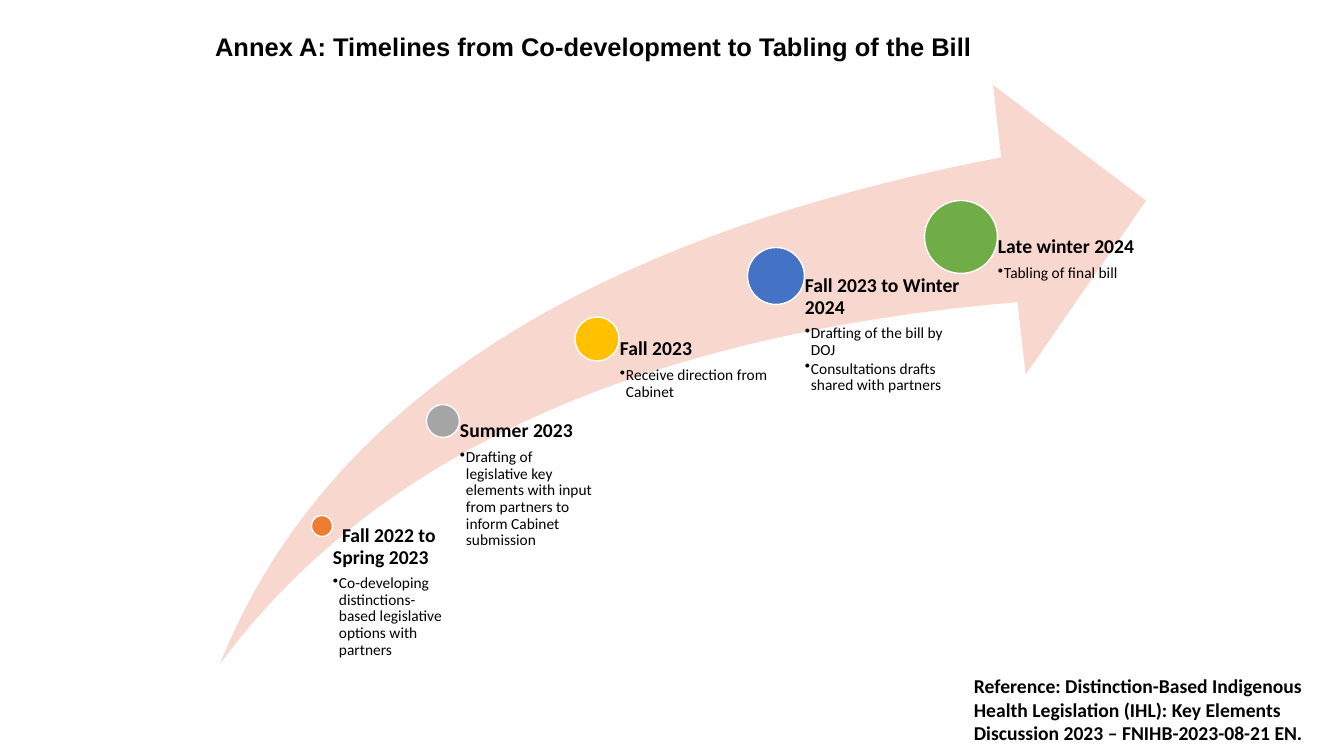
from pptx import Presentation
from pptx.dml.color import RGBColor
from pptx.enum.shapes import MSO_SHAPE as Kind
from pptx.enum.text import MSO_ANCHOR as Anchor, PP_ALIGN as Align
from pptx.oxml.ns import qn
from pptx.util import Pt
from lxml.etree import SubElement

INK = RGBColor(0x02, 0x02, 0x02)
BLACK = RGBColor(0, 0, 0)
WHITE = RGBColor(0xFF, 0xFF, 0xFF)
PEACH = RGBColor(0xF8, 0xD7, 0xCE)
ORANGE = RGBColor(0xED, 0x7D, 0x31)
GREY = RGBColor(0xA5, 0xA5, 0xA5)
GOLD = RGBColor(0xFF, 0xC0, 0x00)
BLUE = RGBColor(0x44, 0x72, 0xC4)
GREEN = RGBColor(0x70, 0xAD, 0x47)


def px(*nums):
    """Turn pixels (100.8 to the inch) into a list of EMU lengths."""
    return [round(n * 914400 / 100.8) for n in nums]


def add_run(para, text, size, bold=True, color=BLACK, face="Calibri"):
    run = para.add_run()
    run.text = text
    font = run.font
    font.size, font.bold, font.name = Pt(size), bold, face
    font.color.rgb = color


deck = Presentation()
deck.slide_width, deck.slide_height = px(1344, 756)
slide = deck.slides.add_slide(deck.slide_layouts[5])

# Title
title = slide.shapes.title
title.left, title.top, title.width, title.height = px(205, 29, 860, 38)
frame = title.text_frame
frame.word_wrap = True
frame.vertical_anchor = Anchor.TOP
para = frame.paragraphs[0]
para.alignment = Align.LEFT
para.line_spacing = 0.9
add_run(para, "Annex A: Timelines from Co-development to Tabling of the Bill",
        18.2, color=INK, face="Arial")

# Arrow
group = slide.shapes.add_group_shape().shapes
arrow = group.add_shape(Kind.SWOOSH_ARROW, *px(220, 85, 926, 579))
arrow.adjustments[0] = arrow.adjustments[1] = 0.25
arrow.shadow.inherit = False
arrow.fill.solid()
arrow.fill.fore_color.rgb = PEACH
arrow.line.fill.background()

# Milestones: centre, dot size, label width, colour, first-line indent, date, tasks
BASE = 664
steps = [
    (322, 526, 21, 121, ORANGE, 9, "Fall 2022 to Spring 2023",
     ["Co-developing distinctions-based legislative options with partners"]),
    (443, 421, 33, 154, GREY, 0, "Summer 2023",
     ["Drafting of legislative key elements with input from partners "
      "to inform Cabinet submission"]),
    (597, 339, 44, 178, GOLD, 0, "Fall 2023",
     ["Receive direction from Cabinet"]),
    (776, 276, 57, 185, BLUE, 0, "Fall 2023 to Winter 2024",
     ["Drafting of the bill by DOJ",
      "Consultations drafts shared with partners"]),
    (961, 237, 73, 185, GREEN, 0, "Late winter 2024",
     ["Tabling of final bill"]),
]
for x, y, size, width, color, indent, date, tasks in steps:
    dot = group.add_shape(Kind.OVAL, *px(x - size / 2, y - size / 2, size, size))
    dot.shadow.inherit = False
    dot.fill.solid()
    dot.fill.fore_color.rgb = color
    dot.line.color.rgb = WHITE
    dot.line.width = Pt(1)

    # Each label hangs from its dot's centre down to the arrow's foot
    frame = group.add_textbox(*px(x, y, width, BASE - y)).text_frame
    frame.word_wrap = True
    frame.margin_left, = px(size // 2 + 1)
    frame.margin_top = frame.margin_right = frame.margin_bottom = 0
    para = frame.paragraphs[0]
    para.line_spacing = 0.9
    para.space_after = Pt(5)
    para._p.get_or_add_pPr().set("indent", str(*px(indent)))
    add_run(para, date, 14)

    for task in tasks:
        para = frame.add_paragraph()
        para.level = 1
        para.line_spacing = 0.9
        para.space_after = Pt(1.5)
        props = para._p.get_or_add_pPr()
        hang, = px(6)
        props.set("marL", str(hang))
        props.set("indent", str(-hang))
        SubElement(props, qn("a:buChar")).set("char", "•")
        add_run(para, task, 11, bold=False)

# Reference
frame = slide.shapes.add_textbox(*px(964, 669, 374, 82)).text_frame
frame.word_wrap = True
add_run(frame.paragraphs[0],
        "Reference: Distinction-Based Indigenous Health Legislation (IHL): "
        "Key Elements Discussion 2023 – FNIHB-2023-08-21 EN.", 14)

deck.save("out.pptx")
